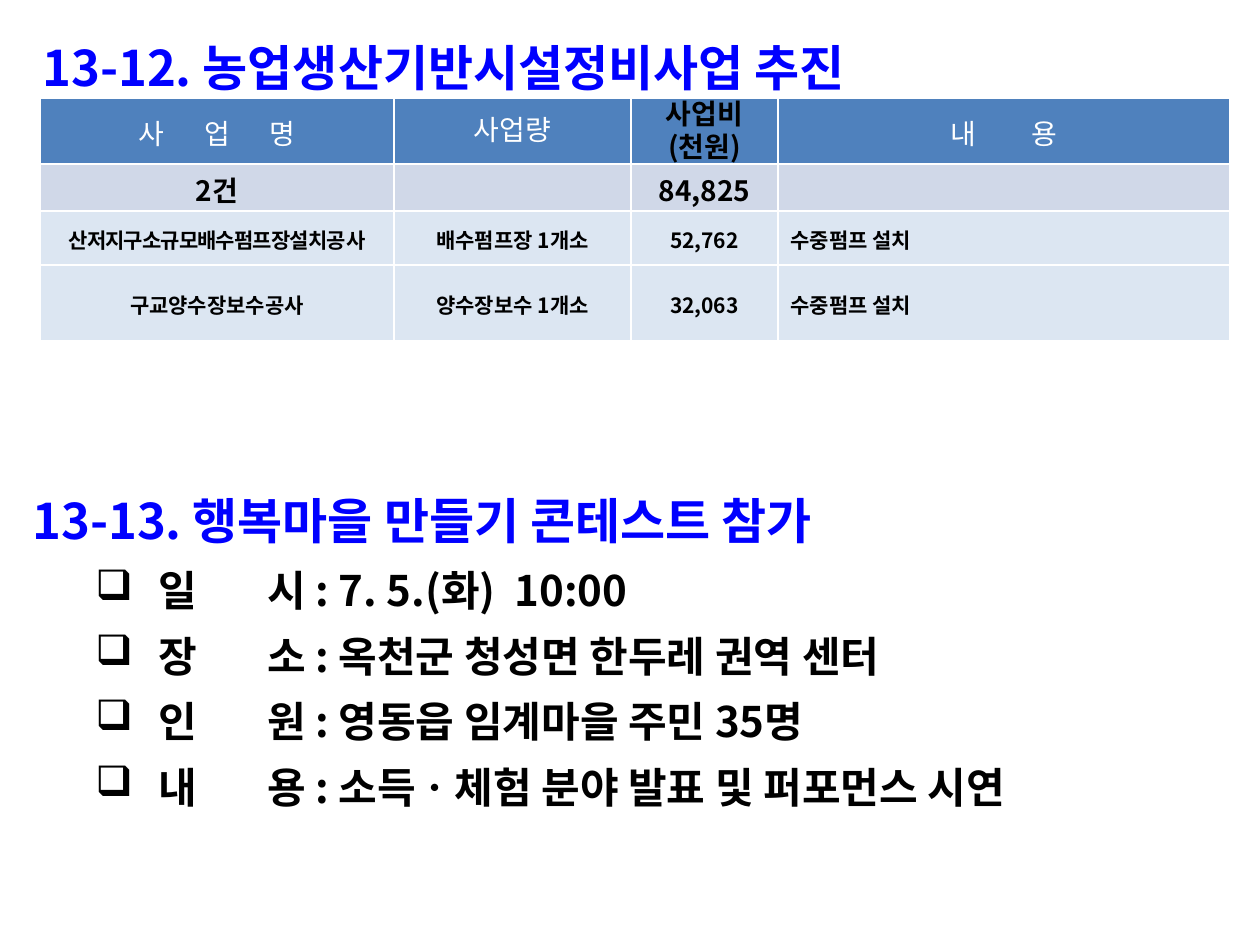
from lxml.etree import SubElement
from pptx import Presentation
from pptx.dml.color import RGBColor
from pptx.enum.text import MSO_ANCHOR as Anchor, PP_ALIGN as Align
from pptx.oxml.ns import qn
from pptx.util import Pt

EMU_PER_PX = 914400 / 126
FONT = "Noto Sans CJK KR"
COLORS = {
    "title": "0000FF", "text": "000000", "white": "FFFFFF",
    "header": "4F81BD", "total": "D0D8E8", "item": "DCE6F2",
}


def px(length):
    return round(length * EMU_PER_PX)


def rgb(name):
    return RGBColor.from_string(COLORS[name])


def add_span(para, text, size=12, color="text", bold=True, spacing=0):
    span = para.add_run()
    span.text = text
    span.font.name = FONT
    span.font.size = Pt(size)
    span.font.bold = bold
    span.font.color.rgb = rgb(color)
    props = span.font._element
    SubElement(props, qn("a:ea"), typeface=FONT)
    if spacing:
        props.set("spc", str(round(spacing * 100)))


class SlideBuilder:
    def __init__(self, width, height):
        self.deck = Presentation()
        self.deck.slide_width, self.deck.slide_height = px(width), px(height)
        self.page = self.deck.slides.add_slide(self.deck.slide_layouts[6])

    def section(self, left, top, width, height, title, items=()):
        box = self.page.shapes.add_textbox(px(left), px(top), px(width), px(height))
        frame = box.text_frame
        frame.word_wrap = True
        para = frame.paragraphs[0]
        para.line_spacing = 1.2
        add_span(para, title, size=28, color="title")
        for label, value in items:
            self.bullet(frame.add_paragraph(), f"{label[0]}\t{label[1]} : {value}")

    def bullet(self, para, text):
        para.level = 1
        para.line_spacing = 1.3
        props = para._p.get_or_add_pPr()
        props.set("marL", str(px(126)))
        props.set("indent", str(px(-63)))
        color = SubElement(props, qn("a:buClr"))
        SubElement(color, qn("a:srgbClr"), val=COLORS["text"])
        SubElement(props, qn("a:buChar"), char="❑")
        tabs = SubElement(props, qn("a:tabLst"))
        SubElement(tabs, qn("a:tab"), pos=str(px(235)), algn="l")
        add_span(para, text, size=24)

    def table(self, left, top, columns, heights, rows):
        frame = self.page.shapes.add_table(
            len(rows), len(columns), px(left), px(top), px(sum(columns)), px(sum(heights)))
        table = frame.table
        for column, width in zip(table.columns, columns):
            column.width = px(width)
        for row, height, (fill, cells) in zip(table.rows, heights, rows):
            row.height = px(height)
            for cell, (text, style) in zip(row.cells, cells):
                self.cell(cell, text, fill, **style)

    def cell(self, cell, text, fill, align=Align.CENTER, line_spacing=1.0, spacing=0, **style):
        cell.margin_top, cell.margin_bottom = px(3), 0
        cell.vertical_anchor = Anchor.MIDDLE
        props = cell._tc.get_or_add_tcPr()
        for side in ("a:lnL", "a:lnR", "a:lnT", "a:lnB"):
            line = SubElement(props, qn(side), w=str(Pt(1)))
            solid = SubElement(line, qn("a:solidFill"))
            SubElement(solid, qn("a:srgbClr"), val=COLORS["white"])
        cell.fill.solid()
        cell.fill.fore_color.rgb = rgb(fill)
        frame = cell.text_frame
        for index, line_text in enumerate(text.split("\n")):
            para = frame.add_paragraph() if index else frame.paragraphs[0]
            para.alignment = align
            para.line_spacing = line_spacing
            if index:
                para.space_before = Pt(3)
            if line_text:
                add_span(para, line_text[:-1], spacing=spacing, **style)
                add_span(para, line_text[-1], **style)
            else:
                SubElement(para._p, qn("a:endParaRPr"), sz="1200")


def main():
    slide = SlideBuilder(1260, 945)
    slide.section(30, 20, 1230, 524, "13-12. 농업생산기반시설정비사업 추진")

    head = dict(size=16, color="white", bold=False)
    total = dict(size=16)
    item = {}
    note = dict(align=Align.LEFT)
    slide.table(40, 98, [354, 237, 147, 452], [66, 47, 54, 76], [
        ("header", [("사 업 명", dict(head, spacing=9.5)),
                    ("사업량", dict(head, line_spacing=0.7)),
                    ("사업비\n(천원)", dict(total, line_spacing=0.7)),
                    ("내 용", dict(head, spacing=14))]),
        ("total", [("2건", total), ("", total), ("84,825", total), ("", total)]),
        ("item", [("산저지구소규모배수펌프장설치공사", dict(spacing=-0.5)),
                  ("배수펌프장 1개소", item), ("52,762", item), ("수중펌프 설치", note)]),
        ("item", [("구교양수장보수공사", item), ("양수장보수 1개소", item),
                  ("32,063", item), ("수중펌프 설치", note)]),
    ])

    slide.section(20, 473, 1201, 349, "13-13. 행복마을 만들기 콘테스트 참가", [
        ("일시", "7. 5.(화)  10:00"),
        ("장소", "옥천군 청성면 한두레 권역 센터"),
        ("인원", "영동읍 임계마을 주민 35명"),
        ("내용", "소득ㆍ체험 분야 발표 및 퍼포먼스 시연"),
    ])
    slide.deck.save("out.pptx")


if __name__ == "__main__":
    main()
